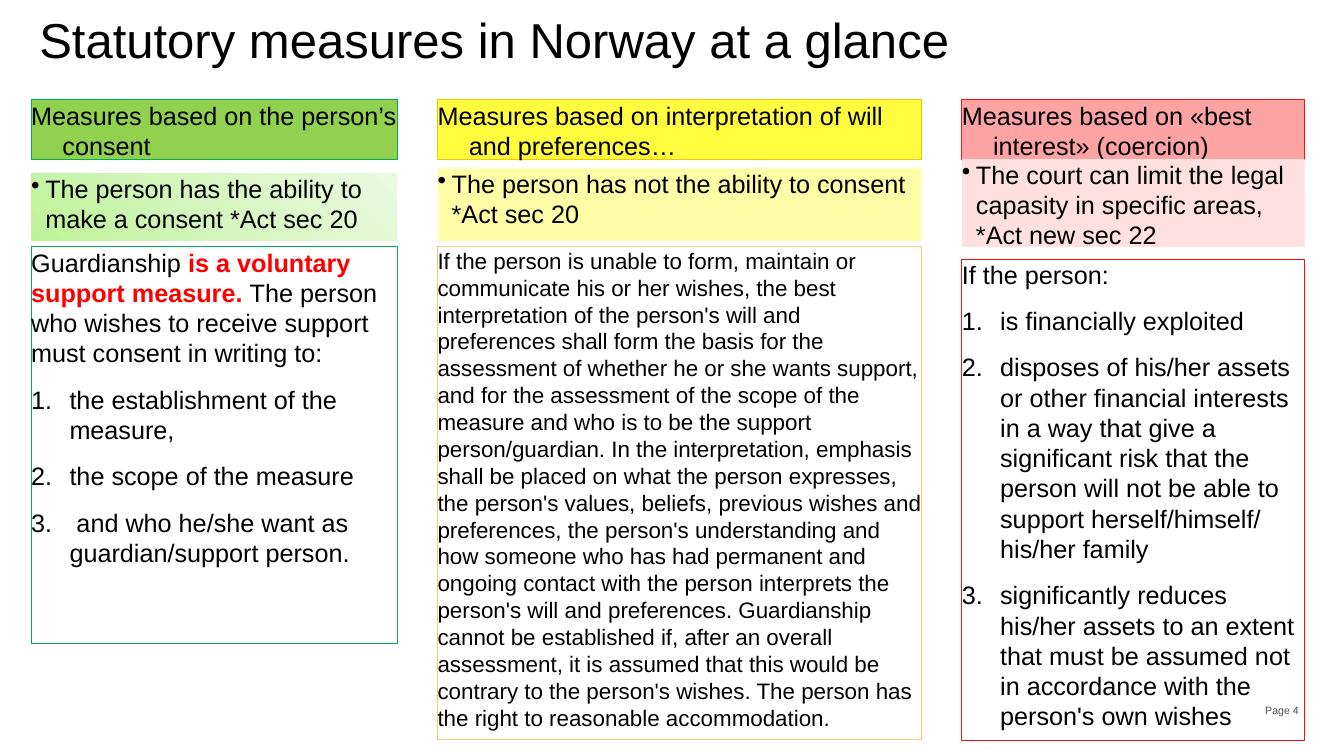
from dataclasses import dataclass
from typing import Optional

import pptx
import pptx.dml.color
import pptx.enum.shapes
import pptx.enum.text
import pptx.oxml
import pptx.oxml.ns
import pptx.util
from lxml import etree

RGBColor = pptx.dml.color.RGBColor
BLACK = RGBColor(0x00, 0x00, 0x00)
RED = RGBColor(0xFF, 0x00, 0x00)
PAGE_GREY = RGBColor(0x52, 0x4B, 0x48)
GREEN = RGBColor(0x92, 0xD0, 0x50)
GREEN_EDGE = RGBColor(0x00, 0xB0, 0x50)
GREEN_GLOW = (RGBColor(0xBE, 0xF2, 0x97), RGBColor(0xD5, 0xF6, 0xC0), RGBColor(0xEA, 0xFA, 0xE0))
YELLOW = RGBColor(0xFF, 0xFD, 0x3E)
YELLOW_EDGE = RGBColor(0xFF, 0xC0, 0x00)
PALE_YELLOW = RGBColor(0xFF, 0xFE, 0xA7)
ORANGE_EDGE = RGBColor(0xFE, 0xC7, 0x76)
PINK = RGBColor(0xFD, 0xA3, 0xA3)
PINK_EDGE = RGBColor(0xF9, 0x10, 0x10)
PALE_PINK = RGBColor(0xFE, 0xE0, 0xE0)

FONT = "Arial"
SLIDE_WIDTH, SLIDE_HEIGHT = 13.33, 7.5
GRID_LEFT, GUTTER = 0.31, 0.4
HEADING_TOP, HEADING_HEIGHT = 0.99, 0.59


@dataclass(frozen=True)
class Words:
    text: str
    color: RGBColor = BLACK
    bold: bool = False


@dataclass(frozen=True)
class Item:
    words: tuple[Words, ...]
    indent: float = 0
    marker: Optional[str] = None


@dataclass(frozen=True)
class Panel:
    top: float
    height: float
    items: tuple[Item, ...]
    fill: Optional[RGBColor] = None
    edge: Optional[RGBColor] = None
    glow: tuple[RGBColor, ...] = ()
    size: float = 18


@dataclass(frozen=True)
class Measure:
    width: float
    panels: tuple[Panel, ...]


def heading(text: str, fill: RGBColor, edge: RGBColor) -> Panel:
    return Panel(HEADING_TOP, HEADING_HEIGHT, (Item((Words(text),), 0.31),), fill, edge)


def bullet(text: str) -> tuple[Item, ...]:
    return (Item((Words(text),), 0.14, "•"),)


def plain(*words: Words) -> Item:
    return Item(words)


def numbered(*texts: str) -> tuple[Item, ...]:
    return tuple(Item((Words(text),), 0.38, "1.") for text in texts)


MEASURES = (
    Measure(3.63, (
        heading("Measures based on the person’s consent", GREEN, GREEN_EDGE),
        Panel(1.72, 0.67, bullet("The person has the ability to make a consent *Act sec 20"),
              glow=GREEN_GLOW),
        Panel(2.45, 3.93, (
            plain(Words("Guardianship "),
                  Words("is a voluntary support measure. ", RED, True),
                  Words("The person who wishes to receive support must consent in writing to:")),
            *numbered("the establishment of the measure,",
                      "the scope of the measure",
                      " and who he/she want as guardian/support person."),
        ), edge=GREEN_EDGE),
    )),
    Measure(4.8, (
        heading("Measures based on interpretation of will and preferences…", YELLOW, YELLOW_EDGE),
        Panel(1.67, 0.72, bullet("The person has not the ability to consent *Act sec 20"), PALE_YELLOW),
        Panel(2.45, 4.89, (plain(Words(
            "If the person is unable to form, maintain or communicate his or her wishes, the best "
            "interpretation of the person's will and preferences shall form the basis for the "
            "assessment of whether he or she wants support, and for the assessment of the scope of "
            "the measure and who is to be the support person/guardian. In the interpretation, "
            "emphasis shall be placed on what the person expresses, the person's values, beliefs, "
            "previous wishes and preferences, the person's understanding and how someone who has "
            "had permanent and ongoing contact with the person interprets the person's will and "
            "preferences. Guardianship cannot be established if, after an overall assessment, it is "
            "assumed that this would be contrary to the person's wishes. The person has the right "
            "to reasonable accommodation.")),), edge=ORANGE_EDGE, size=16),
    )),
    Measure(3.4, (
        heading("Measures based on «best interest» (coercion)", PINK, PINK_EDGE),
        Panel(1.58, 0.87,
              bullet("The court can limit the legal capasity in specific areas, *Act new sec 22"),
              PALE_PINK),
        Panel(2.57, 4.78, (
            plain(Words("If the person:")),
            *numbered("is financially exploited",
                      "disposes of his/her assets or other financial interests in a way that give a "
                      "significant risk that the person will not be able to support "
                      "herself/himself/ his/her family",
                      "significantly reduces his/her assets to an extent that must be assumed not "
                      "in accordance with the person's own wishes"),
        ), edge=PINK_EDGE),
    )),
)


def add_words(paragraph, words: Words, size: float) -> None:
    run = paragraph.add_run()
    run.text = words.text
    run.font.name = FONT
    run.font.size = pptx.util.Pt(size)
    run.font.bold = words.bold
    run.font.color.rgb = words.color


def prepare_frame(frame) -> None:
    frame.word_wrap = True
    frame.auto_size = pptx.enum.text.MSO_AUTO_SIZE.NONE
    frame.vertical_anchor = pptx.enum.text.MSO_ANCHOR.TOP
    frame.margin_left = frame.margin_right = frame.margin_top = frame.margin_bottom = 0


def add_item(paragraph, item: Item, size: float, first: bool) -> None:
    properties = paragraph._p.get_or_add_pPr()
    paragraph.alignment = pptx.enum.text.PP_ALIGN.LEFT
    paragraph.line_spacing = 1.0
    paragraph.space_before = pptx.util.Pt(0 if first else 11.5)
    if item.indent:
        indent = pptx.util.Inches(item.indent)
        properties.set("marL", str(indent))
        properties.set("indent", str(-indent))
    if item.marker == "•":
        etree.SubElement(properties, pptx.oxml.ns.qn("a:buChar"), char="•")
    elif item.marker:
        etree.SubElement(properties, pptx.oxml.ns.qn("a:buAutoNum"), type="arabicPeriod")
    for words in item.words:
        add_words(paragraph, words, size)


def apply_glow(shape, colors: tuple[RGBColor, ...]) -> None:
    stops = "".join(
        f'<a:gs pos="{100000 * i // (len(colors) - 1)}"><a:srgbClr val="{color}"/></a:gs>'
        for i, color in enumerate(colors))
    gradient = pptx.oxml.parse_xml(
        f'<a:gradFill {pptx.oxml.ns.nsdecls("a")} rotWithShape="1"><a:gsLst>{stops}</a:gsLst>'
        '<a:path path="circle"><a:fillToRect t="100000" r="100000"/></a:path></a:gradFill>')
    shape._element.spPr.find(pptx.oxml.ns.qn("a:prstGeom")).addnext(gradient)


def add_panel(slide, left: float, width: float, panel: Panel) -> None:
    shape = slide.shapes.add_shape(
        pptx.enum.shapes.MSO_SHAPE.RECTANGLE,
        *map(pptx.util.Inches, (left, panel.top, width, panel.height)))
    shape.shadow.inherit = False
    if panel.glow:
        apply_glow(shape, panel.glow)
    elif panel.fill is not None:
        shape.fill.solid()
        shape.fill.fore_color.rgb = panel.fill
    else:
        shape.fill.background()
    if panel.edge is not None:
        shape.line.color.rgb = panel.edge
        shape.line.width = pptx.util.Pt(0.75)
    else:
        shape.line.fill.background()
    frame = shape.text_frame
    prepare_frame(frame)
    for i, item in enumerate(panel.items):
        add_item(frame.add_paragraph() if i else frame.paragraphs[0], item, panel.size, i == 0)


def add_title(slide) -> None:
    title = slide.shapes.title
    title.left, title.top, title.width, title.height = map(
        pptx.util.Inches, (0.39, 0.16, 12.55, 0.59))
    prepare_frame(title.text_frame)
    paragraph = title.text_frame.paragraphs[0]
    paragraph.alignment = pptx.enum.text.PP_ALIGN.LEFT
    paragraph.line_spacing = 0.9
    add_words(paragraph, Words("Statutory measures in Norway at a glance"), 35)


def add_page_number(slide) -> None:
    frame = slide.shapes.add_textbox(*map(pptx.util.Inches, (12.32, 6.85, 0.66, 0.4))).text_frame
    frame.word_wrap = True
    frame.vertical_anchor = pptx.enum.text.MSO_ANCHOR.MIDDLE
    frame.paragraphs[0].alignment = pptx.enum.text.PP_ALIGN.RIGHT
    add_words(frame.paragraphs[0], Words("Page 4", PAGE_GREY), 7.5)


def main() -> None:
    deck = pptx.Presentation()
    deck.slide_width = pptx.util.Inches(SLIDE_WIDTH)
    deck.slide_height = pptx.util.Inches(SLIDE_HEIGHT)
    slide = deck.slides.add_slide(deck.slide_layouts.get_by_name("Title Only"))
    add_title(slide)
    left = GRID_LEFT
    for measure in MEASURES:
        for panel in measure.panels:
            add_panel(slide, left, measure.width, panel)
        left += measure.width + GUTTER
    add_page_number(slide)
    deck.save("out.pptx")


if __name__ == "__main__":
    main()
